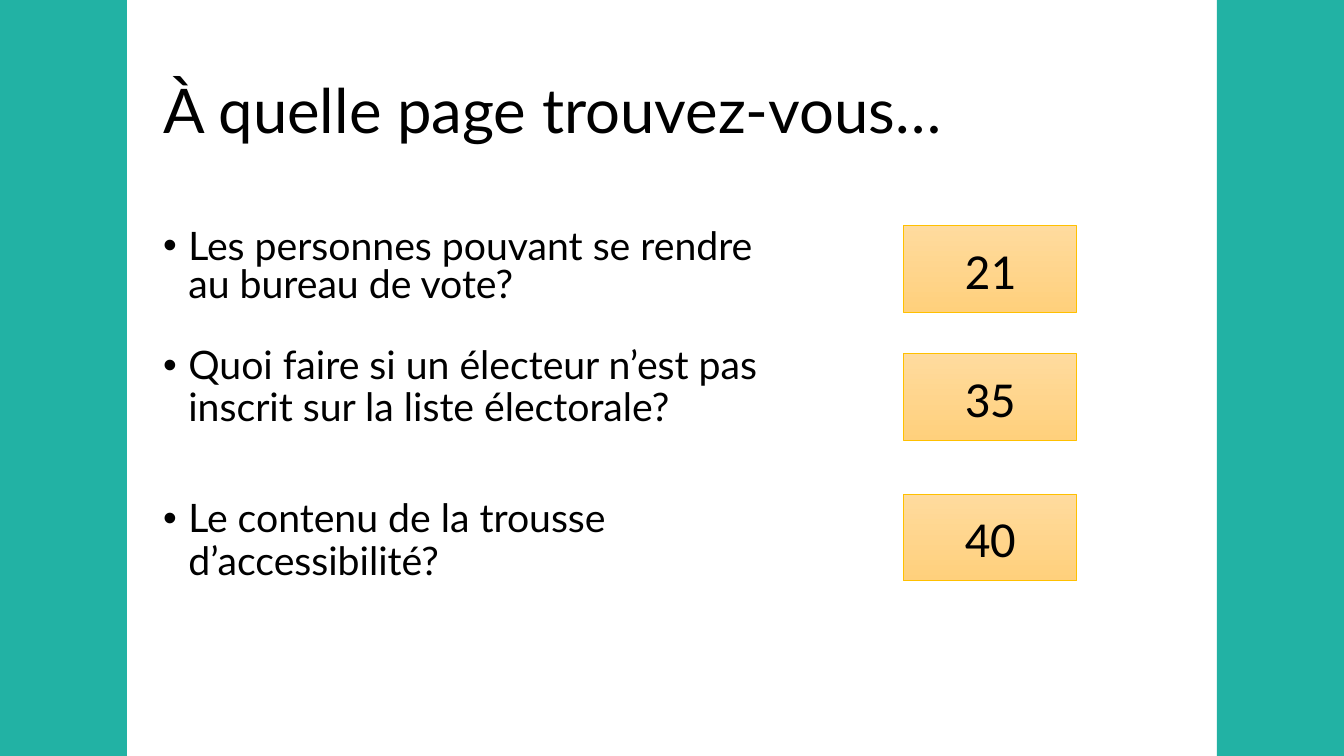
import pptx
import pptx.dml.color
import pptx.enum.shapes
import pptx.enum.text
import pptx.oxml
import pptx.oxml.ns
import pptx.util
from pptx.util import Inches

COLORS = {
    "teal": "22B2A4",
    "white": "FFFFFF",
    "text": "000000",
    "box_top": "FFDB9E",
    "box_bottom": "FFD07C",
    "box_line": "FFC000",
}
SLIDE_WIDTH, SLIDE_HEIGHT = 13.33, 7.5
BAND_WIDTH = 1.26
TEXT_LEFT = 1.52


def rgb(name):
    return pptx.dml.color.RGBColor.from_string(COLORS[name])


class SlideBuilder:
    text_font = "Lato"
    number_font = "Calibri"

    def __init__(self, slide):
        self.slide = slide
        slide.background.fill.solid()
        slide.background.fill.fore_color.rgb = rgb("white")

    def format_text(self, text_frame, text, font_name, size):
        text_frame.word_wrap = True
        text_frame.text = text
        paragraph = text_frame.paragraphs[0]
        font = paragraph.runs[0].font
        font.name = font_name
        font.size = pptx.util.Pt(size)
        font.color.rgb = rgb("text")
        return paragraph

    def rectangle(self, left, top, width, height):
        shape = self.slide.shapes.add_shape(
            pptx.enum.shapes.MSO_SHAPE.RECTANGLE,
            Inches(left), Inches(top), Inches(width), Inches(height))
        shape.shadow.inherit = False
        return shape

    def band(self, left):
        shape = self.rectangle(left, 0, BAND_WIDTH, SLIDE_HEIGHT)
        shape.fill.solid()
        shape.fill.fore_color.rgb = rgb("teal")
        shape.line.fill.background()

    def text(self, text, top, width, height, size, line_spacing):
        shape = self.slide.shapes.add_textbox(
            Inches(TEXT_LEFT), Inches(top), Inches(width), Inches(height))
        paragraph = self.format_text(
            shape.text_frame, text, self.text_font, size)
        paragraph.line_spacing = line_spacing
        return shape

    def title(self, text):
        shape = self.text(text, 0.4, 10.26, 1.45, 44, 0.9)
        shape.text_frame.vertical_anchor = pptx.enum.text.MSO_ANCHOR.MIDDLE

    def question(self, text, top, width, height, line_spacing):
        shape = self.text(text, top, width, height, 28, line_spacing)
        paragraph = shape.text_frame.paragraphs[0]
        paragraph.space_before = pptx.util.Pt(10)
        # Hanging bullet
        properties = paragraph._p.get_or_add_pPr()
        properties.set("marL", str(Inches(0.25)))
        properties.set("indent", str(Inches(-0.25)))
        namespace = pptx.oxml.ns.nsdecls("a")
        for markup in ('<a:buFont {} typeface="Arial"/>',
                       '<a:buChar {} char="•"/>'):
            properties.append(pptx.oxml.parse_xml(markup.format(namespace)))

    def page_box(self, number, top):
        shape = self.rectangle(8.96, top, 1.72, 0.86)
        shape.fill.gradient()
        shape.fill.gradient_angle = 270
        for stop, name in zip(shape.fill.gradient_stops,
                              ("box_top", "box_bottom")):
            stop.color.rgb = rgb(name)
        shape.line.color.rgb = rgb("box_line")
        shape.line.width = pptx.util.Pt(0.5)
        shape.text_frame.vertical_anchor = pptx.enum.text.MSO_ANCHOR.MIDDLE
        paragraph = self.format_text(
            shape.text_frame, number, self.number_font, 36)
        paragraph.alignment = pptx.enum.text.PP_ALIGN.CENTER


def main():
    presentation = pptx.Presentation()
    presentation.slide_width = Inches(SLIDE_WIDTH)
    presentation.slide_height = Inches(SLIDE_HEIGHT)
    builder = SlideBuilder(
        presentation.slides.add_slide(presentation.slide_layouts[6]))

    # Side bands
    for left in (SLIDE_WIDTH - BAND_WIDTH, 0):
        builder.band(left)

    builder.title("À quelle page trouvez-vous…")

    # Questions: text, top, width, height, line spacing
    questions = [
        ("Les personnes pouvant se rendre au bureau de vote?",
         2.24, 6.17, 0.86, 0.8),
        ("Quoi faire si un électeur n’est pas inscrit sur la liste électorale?",
         3.38, 6.73, 1.25, 0.9),
        ("Le contenu de la trousse d’accessibilité?",
         4.9, 6, 1.25, 0.9),
    ]
    for question in questions:
        builder.question(*question)

    # Page numbers
    for number, top in (("21", 2.24), ("35", 3.51), ("40", 4.9)):
        builder.page_box(number, top)

    presentation.save("out.pptx")


if __name__ == "__main__":
    main()
